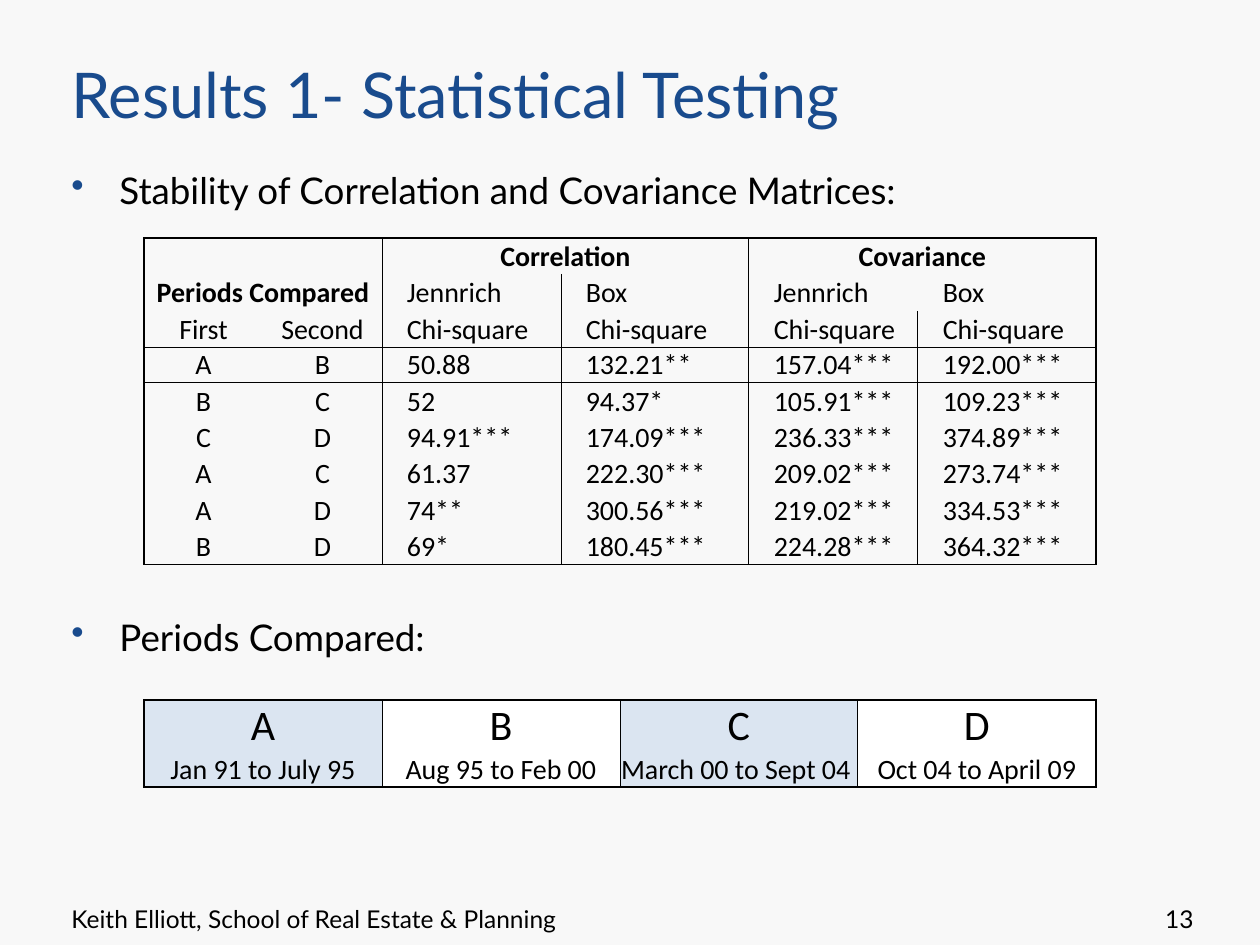
import pptx
import pptx.dml.color
import pptx.enum.text
import pptx.oxml.ns
import pptx.util
from lxml import etree

COLOURS = {"ground": "F8F8F8", "heading": "194B8D", "ink": "000000",
           "tint": "DBE5F1", "white": "FFFFFF"}
ALIGN = pptx.enum.text.PP_ALIGN
ANCHOR = pptx.enum.text.MSO_ANCHOR
PLAIN_TABLE = "{2D5ABB26-0587-4C30-8999-92F81FD0307C}"
OUTER, INNER = 1, 0.5


def px(length):
    return pptx.util.Emu(round(length * 914400 / 126))


def rgb(name):
    return pptx.dml.color.RGBColor.from_string(COLOURS[name])


def sub(parent, tag, **attributes):
    return etree.SubElement(parent, pptx.oxml.ns.qn(tag), attributes)


class Deck:
    text_font = "Lato"
    table_font = "Calibri"

    def __init__(self, width, height):
        self.presentation = pptx.Presentation()
        self.presentation.slide_width = px(width)
        self.presentation.slide_height = px(height)

    def add_slide(self):
        self.slide = self.presentation.slides.add_slide(self.presentation.slide_layouts[6])
        self.slide.background.fill.solid()
        self.slide.background.fill.fore_color.rgb = rgb("ground")

    def run(self, paragraph, wording, size, font, colour="ink", bold=False):
        run = paragraph.add_run()
        run.text = wording
        run.font.size = pptx.util.Pt(size)
        run.font.name = font
        run.font.bold = bold
        run.font.color.rgb = rgb(colour)

    def frame(self, left, top, width, height, anchor=ANCHOR.TOP, wrap=True):
        frame = self.slide.shapes.add_textbox(px(left), px(top), px(width), px(height)).text_frame
        frame.word_wrap = wrap
        frame.vertical_anchor = anchor
        return frame

    def text(self, wording, box, size, colour="ink", align=ALIGN.LEFT, **layout):
        paragraph = self.frame(*box, **layout).paragraphs[0]
        paragraph.alignment = align
        self.run(paragraph, wording, size, self.text_font, colour)

    def bullets(self, points, box, size, indent, gap):
        """Draw bulleted points with gap (in points) between them."""
        frame = self.frame(*box)
        for index, point in enumerate(points):
            paragraph = frame.add_paragraph() if index else frame.paragraphs[0]
            properties = paragraph._p.get_or_add_pPr()
            properties.set("marL", str(px(indent)))
            properties.set("indent", str(px(-indent)))
            sub(sub(properties, "a:buClr"), "a:srgbClr", val=COLOURS["heading"])
            sub(properties, "a:buChar", char="•")
            paragraph.line_spacing = 1.1
            if index:
                paragraph.space_before = pptx.util.Pt(gap)
            self.run(paragraph, point, size, self.text_font)

    def table(self, left, top, widths, heights, merges=()):
        table = self.slide.shapes.add_table(
            len(heights), len(widths), px(left), px(top), px(sum(widths)), px(sum(heights))).table
        table.first_row = table.horz_banding = False
        table._tbl.tblPr.find(pptx.oxml.ns.qn("a:tableStyleId")).text = PLAIN_TABLE
        for column, width in zip(table.columns, widths):
            column.width = px(width)
        for row, height in zip(table.rows, heights):
            row.height = px(height)
        for row, column in merges:
            table.cell(row, column).merge(table.cell(row, column + 1))
        return table

    def rule_cells(self, table, verticals, horizontals):
        """Draw borders, given line widths by column and row boundary."""
        for row in range(len(table.rows)):
            for column in range(len(table.columns)):
                cell = table.cell(row, column)
                if cell.is_spanned:
                    continue
                right = column + (cell.span_width if cell.is_merge_origin else 1)
                edges = {"a:lnL": verticals.get(column), "a:lnR": verticals.get(right),
                         "a:lnT": horizontals.get(row), "a:lnB": horizontals.get(row + 1)}
                for tag, width in edges.items():
                    if width:
                        line = sub(cell._tc.get_or_add_tcPr(), tag, w=str(pptx.util.Pt(width)))
                        sub(sub(line, "a:solidFill"), "a:srgbClr", val=COLOURS["ink"])

    def fill_cell(self, cell, wording, size, insets, align=ALIGN.CENTER, bold=False, fill=None):
        cell.margin_left, cell.margin_top, cell.margin_right, cell.margin_bottom = map(px, insets)
        cell.vertical_anchor = ANCHOR.MIDDLE
        if fill:
            cell.fill.solid()
            cell.fill.fore_color.rgb = rgb(fill)
        else:
            cell.fill.background()
        paragraph = cell.text_frame.paragraphs[0]
        paragraph.alignment = align
        if wording:
            self.run(paragraph, wording, size, self.table_font, bold=bold)
        else:
            sub(paragraph._p, "a:endParaRPr", sz=str(size * 100))


TABLE_LEFT = 144
TEST_RESULTS = [
    ["", "", "Correlation", "", "Covariance", ""],
    ["Periods Compared", "", "Jennrich", "Box", "Jennrich", "Box"],
    ["First", "Second"] + ["Chi-square"] * 4,
    ["A", "B", "50.88", "132.21**", "157.04***", "192.00***"],
    ["B", "C", "52", "94.37*", "105.91***", "109.23***"],
    ["C", "D", "94.91***", "174.09***", "236.33***", "374.89***"],
    ["A", "C", "61.37", "222.30***", "209.02***", "273.74***"],
    ["A", "D", "74**", "300.56***", "219.02***", "334.53***"],
    ["B", "D", "69*", "180.45***", "224.28***", "364.32***"],
]
PERIODS = [("A", "Jan 91 to July 95"), ("B", "Aug 95 to Feb 00"),
           ("C", "March 00 to Sept 04 "), ("D", "Oct 04 to April 09")]


def add_test_results(deck):
    headings = [(0, 0), (0, 2), (0, 4), (1, 0)]
    results = deck.table(TABLE_LEFT, 238, [119, 119, 179, 188, 169, 178], [36, 37, 36] * 3, headings)
    deck.rule_cells(results, {0: OUTER, 2: INNER, 4: INNER, 6: OUTER},
                    {0: OUTER, 3: INNER, 9: OUTER})
    for row, values in enumerate(TEST_RESULTS):
        for column, value in enumerate(values):
            heading = (row, column) in headings
            centred = heading or column < 2
            deck.fill_cell(results.cell(row, column), value, 16,
                           (1 if centred else 25, 1, 1, 0),
                           ALIGN.CENTER if centred else ALIGN.LEFT, heading)


def add_periods(deck):
    periods = deck.table(TABLE_LEFT, 700, [238] * 4, [52, 35])
    deck.rule_cells(periods, {0: OUTER, 1: INNER, 2: INNER, 3: INNER, 4: OUTER},
                    {0: OUTER, 2: OUTER})
    for column, period in enumerate(PERIODS):
        fill = "white" if column % 2 else "tint"
        for row, (wording, size) in enumerate(zip(period, (24, 16))):
            deck.fill_cell(periods.cell(row, column), wording, size, (0, 0, 0, 0), fill=fill)


def main():
    deck = Deck(1260, 945)
    deck.add_slide()
    deck.text("Keith Elliott, School of Real Estate & Planning", (59, 898, 919, 47), 14)
    deck.text("Results 1- Statistical Testing", (59, 38, 965, 99), 36, "heading",
              anchor=ANCHOR.BOTTOM, wrap=False)
    deck.text("13", (1113, 898, 93, 47), 14, align=ALIGN.RIGHT)
    deck.bullets(["Stability of Correlation and Covariance Matrices:", "Periods Compared:"],
                 (59, 157, 1138, 718), 21, indent=48, gap=227.7)
    add_test_results(deck)
    add_periods(deck)
    deck.presentation.save("out.pptx")


if __name__ == "__main__":
    main()
